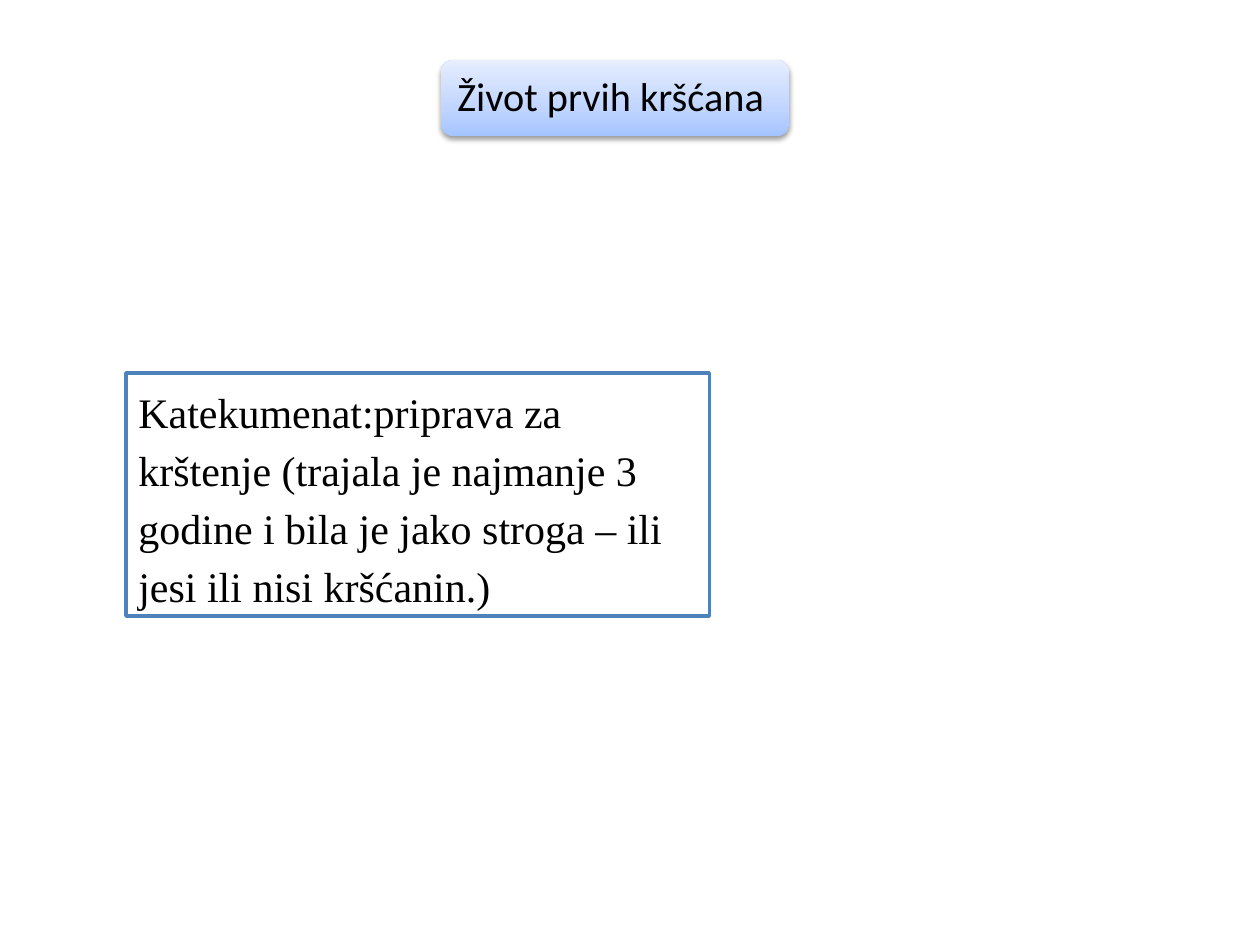
from copy import deepcopy

from lxml import etree
from pptx import Presentation
from pptx.dml.color import RGBColor
from pptx.enum import shapes, text
from pptx.oxml import ns
from pptx.util import Cm, Pt

BLACK = RGBColor(0x00, 0x00, 0x00)
WHITE = RGBColor(0xFF, 0xFF, 0xFF)
BORDER_BLUE = RGBColor(0x4F, 0x81, 0xBD)
HEADING_STOPS = (
    (0, RGBColor(0xA4, 0xC4, 0xFF)),
    (0.35, RGBColor(0xBF, 0xD4, 0xFF)),
    (1, RGBColor(0xE6, 0xEE, 0xFF)),
)


def fill_gradient(card):
    card.fill.gradient()
    card.fill.gradient_angle = 90
    stops = card.fill._fill._gradFill.gsLst
    stops.insert(1, deepcopy(stops[0]))
    for stop, (position, color) in zip(card.fill.gradient_stops, HEADING_STOPS):
        stop.position = position
        stop.color.rgb = color


def add_soft_shadow(card):
    card.shadow.inherit = False
    effects = card._element.spPr.find(ns.qn("a:effectLst"))
    shadow = etree.SubElement(
        effects, ns.qn("a:outerShdw"), blurRad=str(Pt(3.1)),
        dist=str(Pt(1.6)), dir="5400000", rotWithShape="0")
    color = etree.SubElement(shadow, ns.qn("a:srgbClr"), val=str(BLACK))
    etree.SubElement(color, ns.qn("a:alpha"), val="38000")


def write(frame, words, font, size, spacing, anchor):
    frame.word_wrap = True
    frame.vertical_anchor = anchor
    paragraph = frame.paragraphs[0]
    paragraph.alignment = text.PP_ALIGN.LEFT
    paragraph.line_spacing = spacing
    run = paragraph.add_run()
    run.text = words
    run.font.name = font
    run.font.size = Pt(size)
    run.font.color.rgb = BLACK


def add_heading(slide, words):
    card = slide.shapes.add_shape(
        shapes.MSO_SHAPE.ROUNDED_RECTANGLE, Cm(8.89), Cm(1.21), Cm(7.02), Cm(1.54))
    fill_gradient(card)
    card.line.fill.background()
    add_soft_shadow(card)

    heading = slide.shapes.title
    card._element.addnext(heading._element)
    heading.left, heading.top = Cm(8.97), Cm(1.29)
    heading.width, heading.height = Cm(6.86), Cm(1.38)
    frame = heading.text_frame
    frame.auto_size = text.MSO_AUTO_SIZE.NONE
    frame.margin_left = frame.margin_right = Cm(0.25)
    frame.margin_top = frame.margin_bottom = Cm(0.25)
    write(frame, words, "Calibri", 23, 0.9, text.MSO_ANCHOR.MIDDLE)


def add_definition(slide, words):
    definition = slide.shapes.add_shape(
        shapes.MSO_SHAPE.RECTANGLE, Cm(2.54), Cm(7.52), Cm(11.76), Cm(4.9))
    definition.shadow.inherit = False
    definition.fill.solid()
    definition.fill.fore_color.rgb = WHITE
    definition.line.color.rgb = BORDER_BLUE
    definition.line.width = Pt(2)
    frame = definition.text_frame
    frame.auto_size = text.MSO_AUTO_SIZE.SHAPE_TO_FIT_TEXT
    write(frame, words, "Times New Roman", 24, 1.15, text.MSO_ANCHOR.TOP)


def main():
    deck = Presentation()
    deck.slide_width, deck.slide_height = Cm(25.4), Cm(19.05)
    slide = deck.slides.add_slide(deck.slide_layouts[5])
    add_heading(slide, "Život prvih kršćana")
    add_definition(
        slide,
        "Katekumenat:priprava za krštenje (trajala je najmanje 3 godine "
        "i bila je jako stroga – ili jesi ili nisi kršćanin.)")
    deck.save("out.pptx")


if __name__ == "__main__":
    main()
